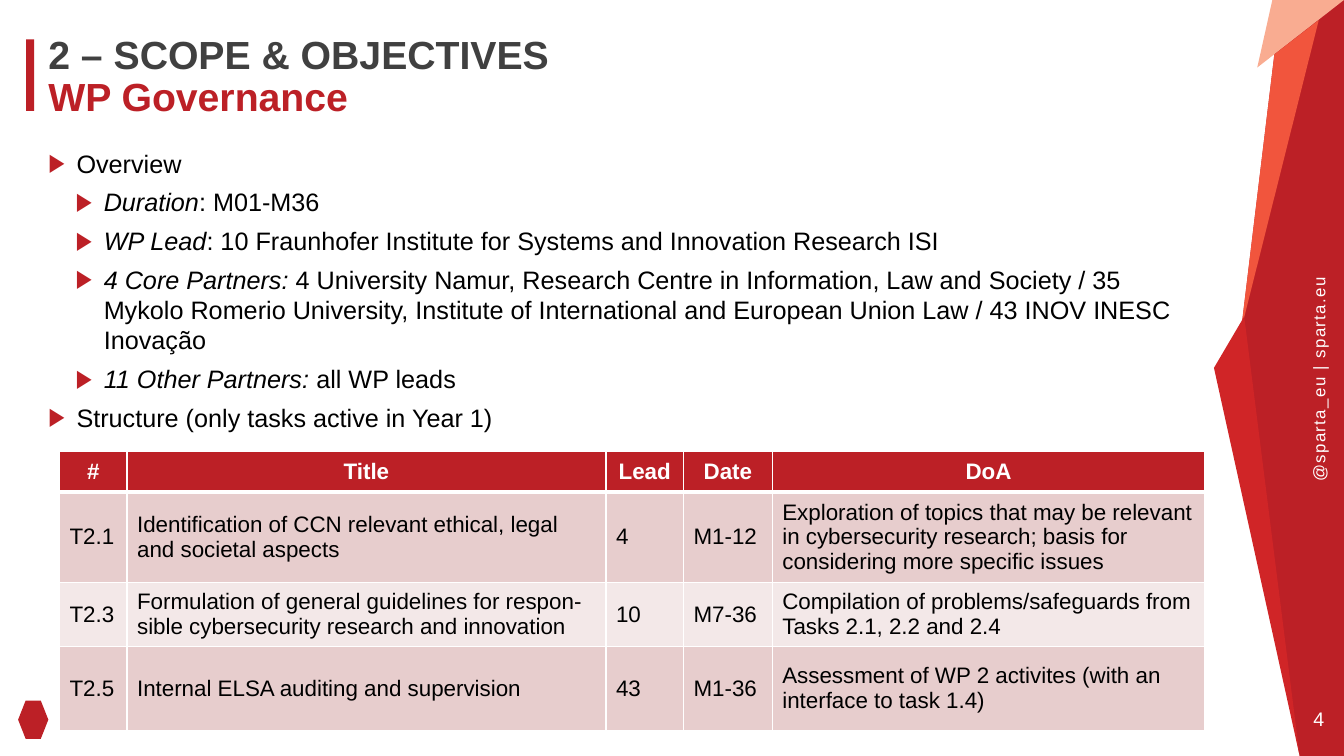
import pptx
import pptx.dml.color
import pptx.enum.shapes
import pptx.enum.text
import pptx.oxml
import pptx.oxml.ns
import pptx.util

Inches = pptx.util.Inches
Pt = pptx.util.Pt
RGBColor = pptx.dml.color.RGBColor
Align = pptx.enum.text.PP_ALIGN
Anchor = pptx.enum.text.MSO_ANCHOR
Shape = pptx.enum.shapes.MSO_SHAPE

FONT = "Arial"
CRIMSON = RGBColor(0xBC, 0x20, 0x26)
RED = RGBColor(0xD0, 0x25, 0x27)
ORANGE = RGBColor(0xF1, 0x55, 0x3D)
PEACH = RGBColor(0xF9, 0xAC, 0x91)
GREY = RGBColor(0x40, 0x40, 0x40)
ROSE = RGBColor(0xE7, 0xCD, 0xCD)
PALE_ROSE = RGBColor(0xF3, 0xE8, 0xE8)
WHITE = RGBColor(0xFF, 0xFF, 0xFF)
BLACK = RGBColor(0, 0, 0)

RIBBON = [
    (CRIMSON, [(13.33, 0), (13.33, 7.5), (12.89, 7.5), (12.23, 3.94), (12.64, 0.54), (12.76, 0)]),
    (PEACH, [(13.33, 0), (12.47, 0.67), (12.62, 0)]),
    (ORANGE, [(13.08, 0.2), (12.31, 3.27), (12.64, 0.54)]),
    (RED, [(12.34, 3.14), (12.89, 7.5), (12.04, 3.65)]),
]

OVERVIEW = [
    (0, "", "Overview"),
    (1, "Duration", ": M01-M36"),
    (1, "WP Lead", ": 10 Fraunhofer Institute for Systems and Innovation Research ISI"),
    (1, "4 Core Partners: ",
     "4 University Namur, Research Centre in Information, Law and Society / 35 "
     "Mykolo Romerio University, Institute of International and European Union Law / "
     "43 INOV INESC Inovação"),
    (1, "11 Other Partners: ", "all WP leads"),
    (0, "", "Structure (only tasks active in Year 1)"),
]

TASKS = [
    ["#", "Title", "Lead", "Date", "DoA"],
    ["T2.1", "Identification of CCN relevant ethical, legal and societal aspects", "4", "M1-12",
     "Exploration of topics that may be relevant in cybersecurity research; "
     "basis for considering more specific issues"],
    ["T2.3", "Formulation of general guidelines for respon-sible cybersecurity research and innovation",
     "10", "M7-36", "Compilation of problems/safeguards from Tasks 2.1, 2.2 and 2.4"],
    ["T2.5", "Internal ELSA auditing and supervision", "43", "M1-36",
     "Assessment of WP 2 activites (with an interface to task 1.4)"],
]
COLUMN_WIDTHS = [0.67, 4.75, 0.77, 0.88, 4.29]
ROW_HEIGHTS = [0.4, 0.87, 0.61, 0.83]


def format_run(run, size, color, bold=False, italic=False):
    run.font.name = FONT
    run.font.size = Pt(size)
    run.font.color.rgb = color
    run.font.bold = bold
    run.font.italic = italic


def paint(shape, color):
    shape.shadow.inherit = False
    shape.fill.solid()
    shape.fill.fore_color.rgb = color
    shape.line.fill.background()


def add_block(slide, shape_type, left, top, width, height, color):
    block = slide.shapes.add_shape(
        shape_type, Inches(left), Inches(top), Inches(width), Inches(height))
    paint(block, color)


def add_facet(slide, color, corners):
    points = [(Inches(x), Inches(y)) for x, y in corners]
    builder = slide.shapes.build_freeform(*points[0])
    builder.add_line_segments(points[1:], close=True)
    paint(builder.convert_to_shape(), color)


def add_text_area(slide, left, top, width, height, anchor=Anchor.TOP, wrap=True):
    area = slide.shapes.add_textbox(Inches(left), Inches(top), Inches(width), Inches(height))
    frame = area.text_frame
    frame.word_wrap = wrap
    frame.vertical_anchor = anchor
    frame.margin_left = frame.margin_right = frame.margin_top = frame.margin_bottom = 0
    return area


def add_title(slide):
    heading = add_text_area(slide, 0.48, 0.35, 11.34, 0.87).text_frame.paragraphs[0]
    heading.text = "2 – SCOPE & OBJECTIVES\vWP Governance"
    heading.line_spacing = 0.9
    for run, color in zip(heading.runs, (GREY, CRIMSON)):
        format_run(run, 28, color, bold=True)


def add_bullet(paragraph, level):
    properties = paragraph._p.get_or_add_pPr()
    properties.set("marL", str(Inches(0.28 if level == 0 else 0.55)))
    properties.set("indent", str(Inches(-0.28)))
    namespace = pptx.oxml.ns.nsdecls("a")
    for bullet_xml in (
        f'<a:buClr {namespace}><a:srgbClr val="{CRIMSON}"/></a:buClr>',
        f'<a:buFont {namespace} typeface="{FONT}"/>',
        f'<a:buChar {namespace} char="▶"/>',
    ):
        properties.append(pptx.oxml.parse_xml(bullet_xml))


def add_overview(slide):
    frame = add_text_area(slide, 0.48, 1.47, 11.34, 2.9).text_frame
    for index, (level, label, detail) in enumerate(OVERVIEW):
        item = frame.add_paragraph() if index else frame.paragraphs[0]
        item.level = level
        add_bullet(item, level)
        item.space_after = Pt(6)
        item.text = label or detail
        format_run(item.runs[0], 18, BLACK, italic=bool(label))
        if label:
            detail_run = item.add_run()
            detail_run.text = detail
            format_run(detail_run, 18, BLACK)


def add_borders(cell, bottom_width):
    properties = cell._tc.get_or_add_tcPr()
    namespace = pptx.oxml.ns.nsdecls("a")
    for side, width in (("L", 1), ("R", 1), ("T", 1), ("B", bottom_width)):
        properties.append(pptx.oxml.parse_xml(
            f'<a:ln{side} {namespace} w="{Pt(width)}"><a:solidFill>'
            f'<a:srgbClr val="{WHITE}"/></a:solidFill></a:ln{side}>'))


def fill_cell(cell, text, fill, is_header):
    add_borders(cell, 3 if is_header else 1)
    cell.fill.solid()
    cell.fill.fore_color.rgb = fill
    cell.vertical_anchor = Anchor.MIDDLE
    cell.text_frame.text = text
    paragraph = cell.text_frame.paragraphs[0]
    paragraph.alignment = Align.CENTER if is_header else Align.LEFT
    format_run(paragraph.runs[0], 16, WHITE if is_header else BLACK, bold=is_header)


def add_task_table(slide):
    table = slide.shapes.add_table(
        len(TASKS), len(COLUMN_WIDTHS), Inches(0.59), Inches(4.48),
        Inches(sum(COLUMN_WIDTHS)), Inches(sum(ROW_HEIGHTS))).table
    for column, width in zip(table.columns, COLUMN_WIDTHS):
        column.width = Inches(width)
    for row_index, task in enumerate(TASKS):
        table.rows[row_index].height = Inches(ROW_HEIGHTS[row_index])
        is_header = row_index == 0
        fill = CRIMSON if is_header else (ROSE if row_index % 2 else PALE_ROSE)
        for column_index, text in enumerate(task):
            fill_cell(table.cell(row_index, column_index), text, fill, is_header)


def add_ribbon_label(slide, text, box, size, alignment, rotation=0, spacing=0):
    label = add_text_area(slide, *box, anchor=Anchor.MIDDLE, wrap=False)
    label.rotation = rotation
    label.text_frame.text = text
    paragraph = label.text_frame.paragraphs[0]
    paragraph.alignment = alignment
    format_run(paragraph.runs[0], size, WHITE)
    if spacing:
        paragraph.runs[0]._r.get_or_add_rPr().set("spc", str(spacing * 100))


def main():
    presentation = pptx.Presentation()
    presentation.slide_width = Inches(13.33)
    presentation.slide_height = Inches(7.5)
    slide = presentation.slides.add_slide(presentation.slide_layouts[6])
    for color, corners in RIBBON:
        add_facet(slide, color, corners)
    add_ribbon_label(slide, "@sparta_eu | sparta.eu", (12.05, 3.65, 2.06, 0.2), 12,
                     Align.LEFT, rotation=270, spacing=1)
    add_ribbon_label(slide, "4", (12.96, 7.01, 0.24, 0.24), 14, Align.CENTER)
    add_block(slide, Shape.RECTANGLE, 0.26, 0.39, 0.08, 0.71, CRIMSON)
    add_block(slide, Shape.HEXAGON, 0.18, 6.95, 0.3, 0.38, CRIMSON)
    add_title(slide)
    add_overview(slide)
    add_task_table(slide)
    presentation.save("out.pptx")


if __name__ == "__main__":
    main()
